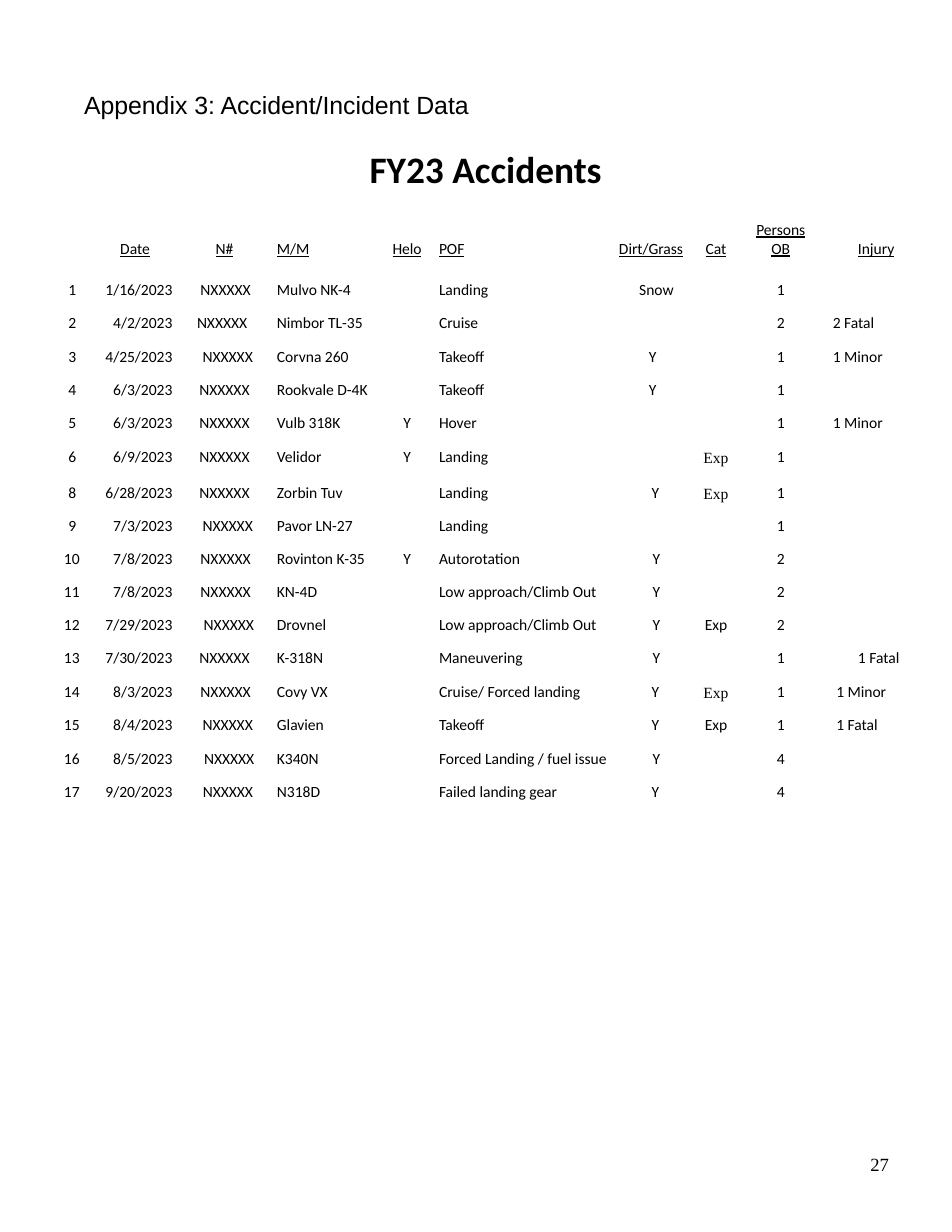
"""Build the appendix page that lists the FY23 accidents in a table."""
from pptx import Presentation
from pptx.dml.color import RGBColor
from pptx.enum.text import MSO_ANCHOR, PP_ALIGN
from pptx.util import Pt

LEFT, CENTER, RIGHT = PP_ALIGN.LEFT, PP_ALIGN.CENTER, PP_ALIGN.RIGHT
TOP = MSO_ANCHOR.TOP
COLORS = {"text": "000000"}
BODY, SERIF, SANS = "Calibri", "Times New Roman", "Arial"


def add_run(paragraph, text, size=10, font=BODY, bold=False, underline=False):
    run = paragraph.add_run()
    run.text = text
    run.font.size = Pt(size)
    run.font.name = font
    run.font.bold = bold
    run.font.underline = underline
    run.font.color.rgb = RGBColor.from_string(COLORS["text"])


def set_margins(holder, left=0, top=0, right=0):
    holder.margin_left, holder.margin_top = Pt(left), Pt(top)
    holder.margin_right, holder.margin_bottom = Pt(right), Pt(0)


presentation = Presentation()
presentation.slide_width, presentation.slide_height = Pt(612), Pt(792)
slide = presentation.slides.add_slide(presentation.slide_layouts[5])

title = slide.shapes.title
title.left, title.top, title.width, title.height = Pt(236.9), Pt(92.9), Pt(151.2), Pt(31)
set_margins(title.text_frame, left=0.7, top=1)
title.text_frame.vertical_anchor = TOP
title.text_frame.word_wrap = False
title.text_frame.paragraphs[0].alignment = LEFT
add_run(title.text_frame.paragraphs[0], "FY23 Accidents", 24, bold=True)

labels = [
    ("Appendix 3: Accident/Incident Data", 53.3, 56.9, 255.6, 20.9, 0.7, 16, SANS),
    ("27", 556.6, 741, 18.7, 15.1, 2.9, 12, SERIF),
]
for text, left, top, width, height, indent, size, font in labels:
    box = slide.shapes.add_textbox(Pt(left), Pt(top), Pt(width), Pt(height))
    box.text_frame.word_wrap = True
    set_margins(box.text_frame, left=indent, top=1 if font == SANS else 0)
    add_run(box.text_frame.paragraphs[0], text, size, font)

headers = ["", "Date", "N#", "M/M", "Helo", "POF", "Dirt/Grass", "Cat", "Persons", "Injury"]
column_widths = [20.9, 59, 51.1, 74.9, 31.7, 117.2, 51.8, 31.7, 49.7, 53]
alignments = [LEFT, CENTER, LEFT, LEFT, CENTER, LEFT, CENTER, CENTER, CENTER, LEFT]
column_indents = [5, 0, 0, 8.2, 2.2, 5.8, 0, 0, 0, 8.6]
header_right_margins = {1: 5, 6: 2, 7: 2, 9: 4.9}
right_margins = {7: 2, 9: 1.7}

tail_indents = [10.1, 7.9, 11.5, 9.4, 9.4, 9.4, 9.4, 11.5,
                10.1, 10.1, 12.2, 9.4, 10.1, 11.5, 12.4, 11.6]
surface_indents = {"3": 0, "4": 0, "8": 3.6, "14": 3.6, "15": 3.6, "17": 3.6}
top_margins = {"6": 0.6, "8": 1.8, "14": 0.6}
row_heights = {"5": 21.1, "6": 22, "8": 22.8, "13": 21.1, "14": 22, "17": 18}
serif_rows = {"6", "8", "14"}
accidents = [
    ("1", "1/16/2023", "Mulvo NK-4", "", "Landing", "Snow", "", "1", ""),
    ("2", "4/2/2023", "Nimbor TL-35", "", "Cruise", "", "", "2", "2 Fatal"),
    ("3", "4/25/2023", "Corvna 260", "", "Takeoff", "Y", "", "1", "1 Minor"),
    ("4", "6/3/2023", "Rookvale D-4K", "", "Takeoff", "Y", "", "1", ""),
    ("5", "6/3/2023", "Vulb 318K", "Y", "Hover", "", "", "1", "1 Minor"),
    ("6", "6/9/2023", "Velidor", "Y", "Landing", "", "Exp", "1", ""),
    ("8", "6/28/2023", "Zorbin Tuv", "", "Landing", "Y", "Exp", "1", ""),
    ("9", "7/3/2023", "Pavor LN-27", "", "Landing", "", "", "1", ""),
    ("10", "7/8/2023", "Rovinton K-35", "Y", "Autorotation", "Y", "", "2", ""),
    ("11", "7/8/2023", "KN-4D", "", "Low approach/Climb Out", "Y", "", "2", ""),
    ("12", "7/29/2023", "Drovnel", "", "Low approach/Climb Out", "Y", "Exp", "2", ""),
    ("13", "7/30/2023", "K-318N", "", "Maneuvering", "Y", "", "1", "1 Fatal"),
    ("14", "8/3/2023", "Covy VX", "", "Cruise/ Forced landing", "Y", "Exp", "1", "1 Minor"),
    ("15", "8/4/2023", "Glavien", "", "Takeoff", "Y", "Exp", "1", "1 Fatal"),
    ("16", "8/5/2023", "K340N", "", "Forced Landing / fuel issue", "Y", "", "4", ""),
    ("17", "9/20/2023", "N318D", "", "Failed landing gear", "Y", "", "4", ""),
]

heights = [39.2] + [row_heights.get(accident[0], 21.35) for accident in accidents]
table = slide.shapes.add_table(
    len(heights), len(headers), Pt(38.9), Pt(141.9), Pt(sum(column_widths)), Pt(sum(heights))
).table
table.first_row = table.horz_banding = False
for column, width in zip(table.columns, column_widths):
    column.width = Pt(width)
for row, height in zip(table.rows, heights):
    row.height = Pt(height)

for index, header in enumerate(headers):
    cell = table.cell(0, index)
    cell.fill.background()
    stacked = header == "Persons"
    set_margins(cell, column_indents[index], 0 if stacked else 12.8,
                header_right_margins.get(index, 0))
    paragraph = cell.text_frame.paragraphs[0]
    paragraph.alignment = RIGHT if header == "Injury" else alignments[index]
    if header == "N#":
        paragraph.alignment = CENTER
    if header:
        paragraph.line_spacing = 1.0 if stacked else Pt(11.7)
        add_run(paragraph, header, underline=True)
    else:
        paragraph._p.get_or_add_endParaRPr().set("sz", "1000")
    if stacked:
        second_line = cell.text_frame.add_paragraph()
        second_line.alignment = CENTER
        add_run(second_line, "OB", underline=True)

for row_index, accident in enumerate(accidents, 1):
    number, date, *details = accident
    indents = list(column_indents)
    indents[0] = 5 if len(number) == 1 else 2.2
    indents[1] = 5 if len(date) == 8 else 0
    indents[2] = tail_indents[row_index - 1]
    indents[6] = surface_indents.get(number, 5)
    indents[9] = 10.8 if number in ("14", "15") else 8.6
    for index, text in enumerate([number, date, "NXXXXX", *details]):
        cell = table.cell(row_index, index)
        cell.fill.background()
        set_margins(cell, indents[index], top_margins.get(number, 0),
                    right_margins.get(index, 0))
        paragraph = cell.text_frame.paragraphs[0]
        paragraph.line_spacing = Pt(11.7)
        paragraph.alignment = RIGHT if (number, index) == ("13", 9) else alignments[index]
        if text:
            add_run(paragraph, text, font=SERIF if index == 7 and number in serif_rows else BODY)
        else:
            paragraph._p.get_or_add_endParaRPr().set("sz", "1000")

presentation.save("out.pptx")
